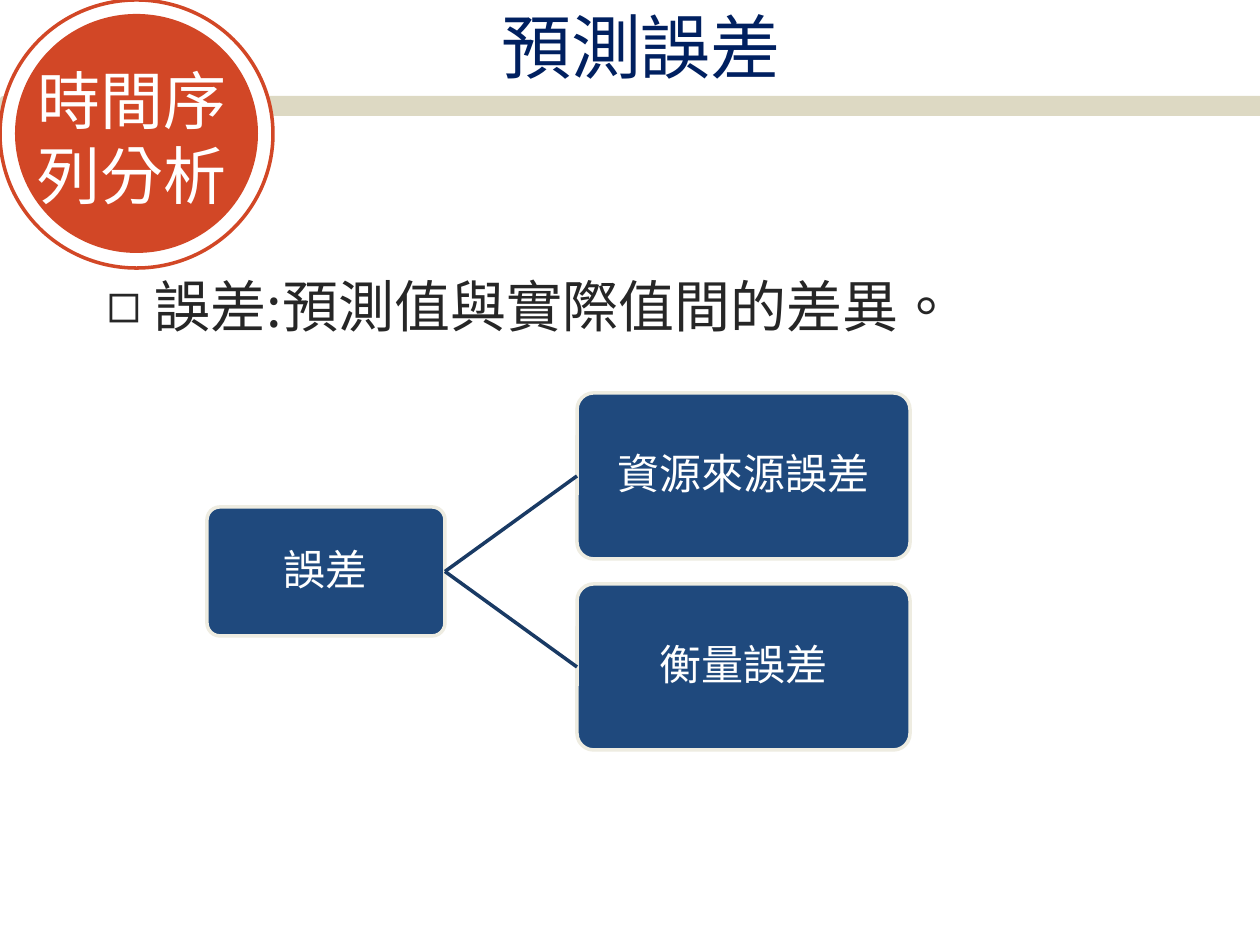
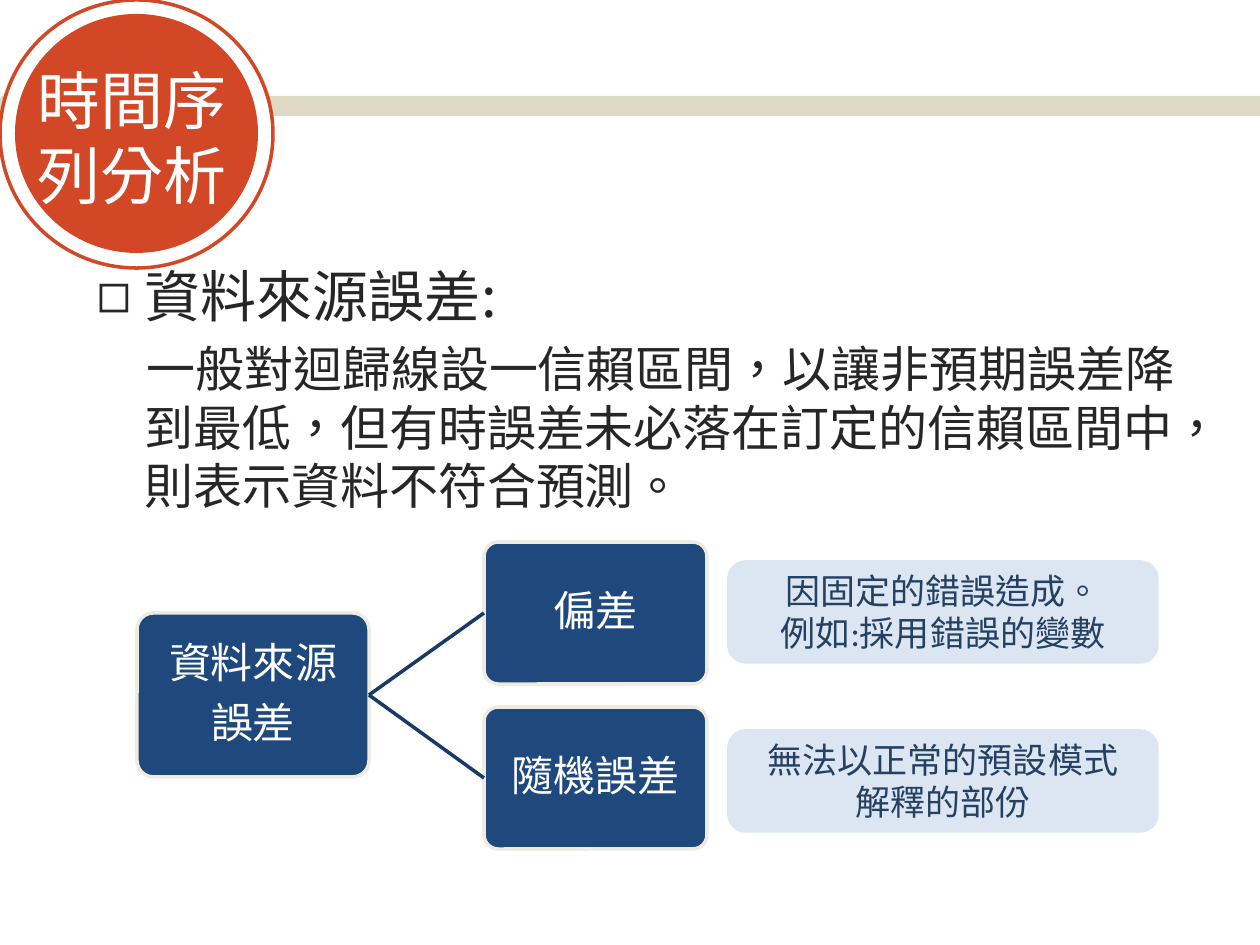
import dataclasses

import lxml.etree
import pptx
import pptx.dml.color
import pptx.enum.shapes
import pptx.enum.text
import pptx.oxml.ns
import pptx.util

SHAPE = pptx.enum.shapes.MSO_SHAPE
ALIGN = pptx.enum.text.PP_ALIGN
FIT = pptx.enum.text.MSO_AUTO_SIZE
EMU_PER_PX = 914400 / 126


@dataclasses.dataclass(frozen=True)
class Theme:
    font: str = "Calibri"
    cjk_font: str = "Noto Sans CJK SC"
    title: str = "002060"
    body: str = "262626"
    white: str = "FFFFFF"
    badge: str = "D24726"
    band: str = "DDD9C3"
    node: str = "1F497D"
    node_edge: str = "EEECE1"
    branch: str = "193A64"
    note: str = "DCE6F2"
    note_text: str = "254061"
    title_size: int = 40
    badge_size: int = 36
    lead_size: int = 32
    detail_size: int = 28
    node_size: int = 24
    note_size: int = 20
    line_width: int = 2


def px(length):
    return pptx.util.Emu(round(length * EMU_PER_PX))


def rgb(code):
    return pptx.dml.color.RGBColor.from_string(code)


class SlideWriter:
    def __init__(self, deck, theme):
        self.deck = deck
        self.theme = theme
        self.page = None

    def start_page(self):
        self.page = self.deck.slides.add_slide(self.deck.slide_layouts[1])

    def place(self, item, left, top, width, height):
        item.left, item.top, item.width, item.height = map(px, (left, top, width, height))

    def style(self, para, size, color, font):
        for span in para.runs:
            span.font.size = pptx.util.Pt(size)
            span.font.name = font
            span.font.color.rgb = rgb(color)
            props = span._r.get_or_add_rPr()
            props.set("lang", "zh-TW")
            lxml.etree.SubElement(props, pptx.oxml.ns.qn("a:ea"), typeface=self.theme.cjk_font)

    def title(self, text):
        box = self.page.shapes.title
        if not text:
            box.element.getparent().remove(box.element)
            return
        self.place(box, 74, -34, 1134, 158)
        box.text_frame.text = text
        self.style(box.text_frame.paragraphs[0], self.theme.title_size,
                   self.theme.title, self.theme.cjk_font)

    def body(self, left, top, lead, detail=None):
        box = self.page.placeholders[1]
        self.place(box, left, top, 1134, 624)
        box.text_frame.text = "\n".join(filter(None, (lead, detail)))
        box.text_frame.auto_size = FIT.NONE
        sizes = (self.theme.lead_size, self.theme.detail_size)
        for index, para in enumerate(box.text_frame.paragraphs):
            props = para._p.get_or_add_pPr()
            props.set("marL", str(px(48)))
            props.set("indent", str(px(2 if index else -48)))
            if index:
                lxml.etree.SubElement(props, pptx.oxml.ns.qn("a:buNone"))
            else:
                lxml.etree.SubElement(props, pptx.oxml.ns.qn("a:buChar"), char="◻")
            self.style(para, sizes[index], self.theme.body, self.theme.cjk_font)

    def shape(self, kind, bounds, fill, edge=None):
        box = self.page.shapes.add_shape(kind, *map(px, bounds))
        box.shadow.inherit = False
        box.fill.solid()
        box.fill.fore_color.rgb = rgb(fill)
        if edge:
            box.line.color.rgb = rgb(edge)
            box.line.width = pptx.util.Pt(self.theme.line_width)
        else:
            box.line.fill.background()
        return box

    def label(self, box, text, size, color):
        frame = box.text_frame
        frame.word_wrap = True
        frame.vertical_anchor = pptx.enum.text.MSO_ANCHOR.MIDDLE
        frame.text = text
        for para in frame.paragraphs:
            para.alignment = ALIGN.CENTER
            self.style(para, size, color, self.theme.font)

    def node(self, bounds, text):
        box = self.shape(SHAPE.ROUNDED_RECTANGLE, bounds, self.theme.node, self.theme.node_edge)
        box.adjustments[0] = 0.1
        self.label(box, text, self.theme.node_size, self.theme.white)
        frame = box.text_frame
        frame.margin_left = frame.margin_right = frame.margin_top = frame.margin_bottom = px(2)
        for para in frame.paragraphs:
            para.line_spacing = 0.9
            para.space_after = pptx.util.Pt(0.35 * self.theme.node_size)
        return box

    def note(self, bounds, text):
        box = self.shape(SHAPE.ROUNDED_RECTANGLE, bounds, self.theme.note, self.theme.note)
        self.label(box, text, self.theme.note_size, self.theme.note_text)

    def branch(self, root, leaf):
        line = self.page.shapes.add_connector(
            pptx.enum.shapes.MSO_CONNECTOR.STRAIGHT, 0, 0, 0, 0)
        line.begin_connect(root, 3)
        line.end_connect(leaf, 1)
        line.line.color.rgb = rgb(self.theme.branch)
        line.line.width = pptx.util.Pt(self.theme.line_width)
        lxml.etree.SubElement(line._element.spPr, pptx.oxml.ns.qn("a:effectLst"))

    def tree(self, root_text, root_left, root_size, leaf_texts, leaf_bounds, pitch):
        left, top, width, height = leaf_bounds
        root_width, root_height = root_size
        span = (len(leaf_texts) - 1) * pitch + height
        root_top = top + (span - root_height) // 2
        root = self.node((root_left, root_top, root_width, root_height), root_text)
        for row, text in enumerate(leaf_texts):
            leaf = self.node((left, top + row * pitch, width, height), text)
            self.branch(root, leaf)

    def badge(self, text):
        theme = self.theme
        self.shape(SHAPE.ROUNDED_RECTANGLE, (0, 96, 1290, 20), theme.band)
        self.shape(SHAPE.OVAL, (0, 0, 273, 268), theme.white, theme.badge)
        self.shape(SHAPE.OVAL, (15, 14, 243, 239), theme.badge)
        box = self.page.shapes.add_textbox(*map(px, (25, 55, 217, 165)))
        frame = box.text_frame
        frame.word_wrap = False
        frame.auto_size = FIT.SHAPE_TO_FIT_TEXT
        frame.text = text
        for para in frame.paragraphs:
            self.style(para, theme.badge_size, theme.white, theme.cjk_font)


def forecast_error(writer):
    writer.start_page()
    writer.title("預測誤差")
    writer.body(94, 265, "誤差:預測值與實際值間的差異。")
    writer.tree("誤差", 207, (238, 129), ("資源來源誤差", "衡量誤差"),
                (577, 393, 333, 166), 191)


def source_error(writer):
    writer.start_page()
    writer.title(None)
    writer.body(84, 255, "資料來源誤差:",
                "一般對迴歸線設一信賴區間，以讓非預期誤差降到最低，"
                "但有時誤差未必落在訂定的信賴區間中，則表示資料不符合預測。")
    writer.tree("資料來源\n誤差", 137, (232, 164), ("偏差", "隨機誤差"),
                (484, 542, 223, 142), 165)
    notes = ("因固定的錯誤造成。\n例如:採用錯誤的變數", "無法以正常的預設模式\n解釋的部份")
    for row, text in enumerate(notes):
        writer.note((729, 562 + row * 169, 428, 100), text)


def main():
    deck = pptx.Presentation()
    deck.slide_width, deck.slide_height = px(1260), px(945)
    writer = SlideWriter(deck, Theme())
    for build_page in (forecast_error, source_error):
        build_page(writer)
        writer.badge("時間序\n列分析")
    deck.save("out.pptx")


if __name__ == "__main__":
    main()
